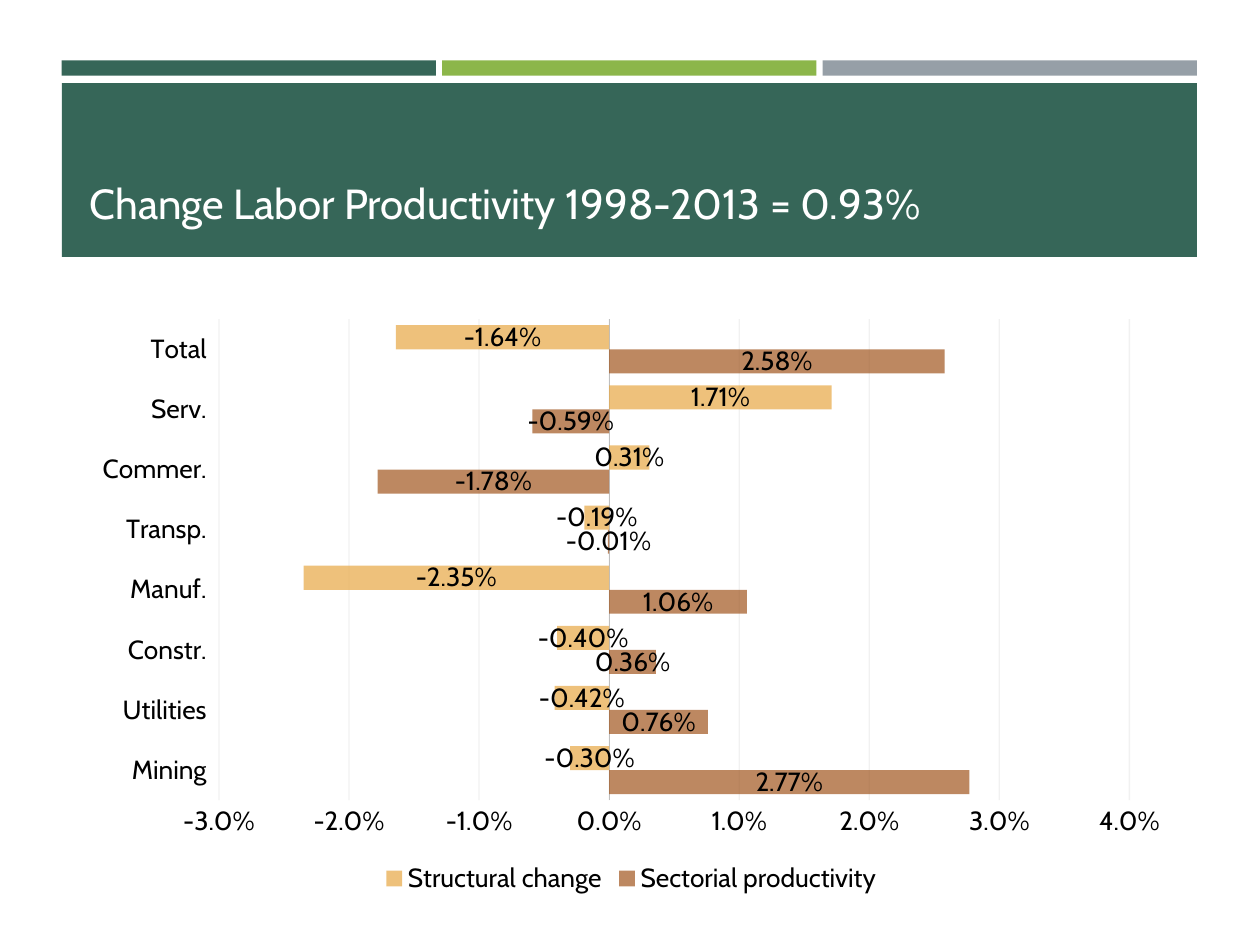
import lxml.etree
import pptx
import pptx.util
import pptx.dml.color
import pptx.chart.data
import pptx.enum.chart
import pptx.enum.shapes
import pptx.enum.text
import pptx.oxml.ns
from pptx.util import Inches

GREEN, LIME, GRAY = "366658", "8CB64A", "969FA7"
CATS = ["Mining", "Utilities", "Constr.", "Manuf.", "Transp.", "Commer.", "Serv.", "Total"]
SERIES = [
    ("Sectorial productivity", "A1561F",
     [0.0277, 0.0076, 0.0036, 0.0106, -0.0001, -0.0178, -0.0059, 0.0258]),
    ("Structural change", "E8A844",
     [-0.003, -0.0042, -0.004, -0.0235, -0.0019, 0.0031, 0.0171, -0.0164]),
]


def color(code):
    return pptx.dml.color.RGBColor.from_string(code)


class Deck:
    """Holds the style and the current slide."""

    face = "Cabin"

    def __init__(self):
        self.prs = pptx.Presentation()
        self.prs.slide_width = Inches(10)
        self.prs.slide_height = Inches(7.5)
        self.slide = self.prs.slides.add_slide(self.prs.slide_layouts[5])

    def style(self, font, size, code):
        font.name = self.face
        font.size = pptx.util.Pt(size)
        font.bold = False
        font.color.rgb = color(code)

    def paint(self, fill, code):
        fill.solid()
        fill.fore_color.rgb = color(code)

    def fade(self, node, share):
        qn = pptx.oxml.ns.qn
        tint = next(node.iter(qn("a:srgbClr")))
        lxml.etree.SubElement(tint, qn("a:alpha")).set("val", str(share * 1000))

    def rect(self, left, top, width, height, code):
        kind = pptx.enum.shapes.MSO_SHAPE.RECTANGLE
        box = self.slide.shapes.add_shape(
            kind, Inches(left), Inches(top), Inches(width), Inches(height))
        box.shadow.inherit = False
        self.paint(box.fill, code)
        box.line.fill.background()

    def title(self, text, left, top, width, height):
        box = self.slide.shapes.title
        box.left, box.top = Inches(left), Inches(top)
        box.width, box.height = Inches(width), Inches(height)
        self.slide.shapes._spTree.append(box._element)
        frame = box.text_frame
        frame.text = text
        frame.word_wrap = True
        frame.auto_size = pptx.enum.text.MSO_AUTO_SIZE.NONE
        frame.vertical_anchor = pptx.enum.text.MSO_ANCHOR.BOTTOM
        para = frame.paragraphs[0]
        para.alignment = pptx.enum.text.PP_ALIGN.LEFT
        self.style(para.runs[0].font, 24, "FFFFFF")

    def axis(self, axis):
        none = pptx.enum.chart.XL_TICK_MARK.NONE
        axis.major_tick_mark = axis.minor_tick_mark = none
        self.style(axis.tick_labels.font, 15, "000000")

    def stroke(self, line, code):
        line.color.rgb = color(code)
        line.width = pptx.util.Pt(0.75)

    def chart(self, left, top, width, height):
        enum = pptx.enum.chart
        qn = pptx.oxml.ns.qn
        data = pptx.chart.data.CategoryChartData(number_format="0.00%")
        data.categories = CATS
        for name, _, vals in SERIES:
            data.add_series(name, vals)
        chart = self.slide.shapes.add_chart(
            enum.XL_CHART_TYPE.BAR_CLUSTERED, Inches(left), Inches(top),
            Inches(width), Inches(height), data).chart
        self.style(chart.font, 15, "000000")
        chart.has_title = False
        chart.has_legend = True
        chart.legend.position = enum.XL_LEGEND_POSITION.BOTTOM
        chart.legend.include_in_layout = False
        self.style(chart.legend.font, 15, "000000")

        cat, val = chart.category_axis, chart.value_axis
        self.axis(cat)
        cat.tick_label_position = enum.XL_TICK_LABEL_POSITION.LOW
        self.stroke(cat.format.line, "BFBFBF")
        self.axis(val)
        val.minimum_scale, val.maximum_scale, val.major_unit = -0.03, 0.04, 0.01
        val.tick_labels.number_format = "0.0%"
        val.tick_labels.number_format_is_linked = False
        val.format.line.fill.background()
        val.has_major_gridlines = True
        self.stroke(val.major_gridlines.format.line, "D9D9D9")
        self.fade(val._element.find(qn("c:majorGridlines")), 35)

        plot = chart.plots[0]
        plot.gap_width, plot.overlap = 50, 0
        plot.vary_by_categories = False
        for bars, (_, code, _) in zip(plot.series, SERIES):
            bars.invert_if_negative = False
            self.paint(bars.format.fill, code)
            self.fade(bars._element.find(qn("c:spPr")), 70)
            tags = bars.data_labels
            tags.show_value = True
            tags.position = enum.XL_LABEL_POSITION.CENTER
            tags.number_format = "0.00%"
            tags.number_format_is_linked = False
            self.style(tags.font, 15, "000000")


def main():
    deck = Deck()
    for i, code in enumerate([GREEN, LIME, GRAY]):
        deck.rect(0.49 + i * 3.02, 0.48, 2.97, 0.12, code)
    deck.rect(0.49, 0.66, 9.01, 1.38, GREEN)
    deck.title("Change Labor Productivity 1998-2013 = 0.93%", 0.61, 0.92, 7.03, 0.94)
    deck.chart(0.64, 2.44, 8.74, 4.7)
    deck.prs.save("out.pptx")


if __name__ == "__main__":
    main()
